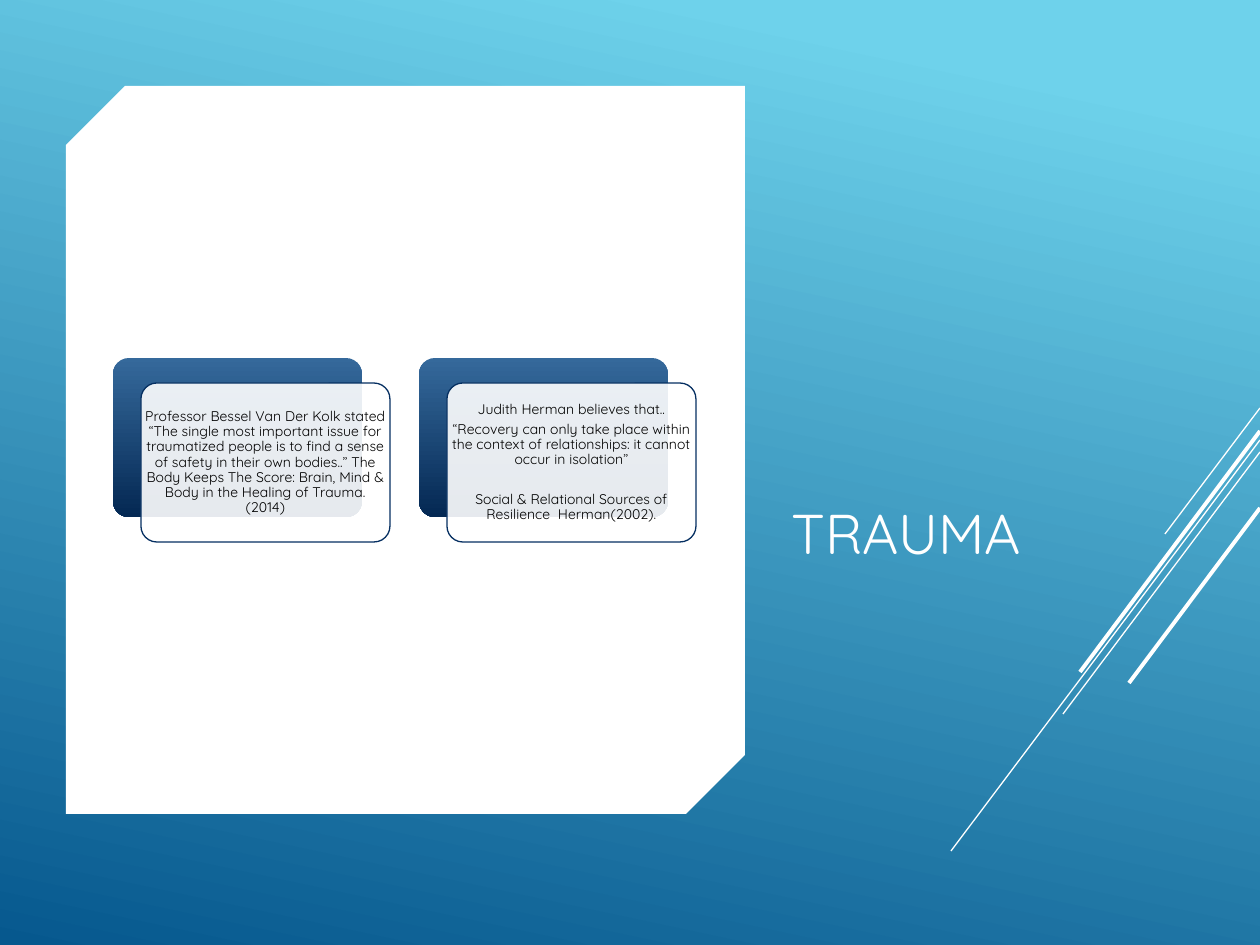
import dataclasses

import lxml.etree
import pptx
import pptx.dml.color
import pptx.enum.shapes
import pptx.enum.text
import pptx.oxml
import pptx.oxml.ns
import pptx.util

RGB = pptx.dml.color.RGBColor
Pt = pptx.util.Pt
Shape = pptx.enum.shapes.MSO_SHAPE
Align = pptx.enum.text.PP_ALIGN
Anchor = pptx.enum.text.MSO_ANCHOR
qn = pptx.oxml.ns.qn

WHITE = RGB(0xFF, 0xFF, 0xFF)
BLACK = RGB(0x00, 0x00, 0x00)
SKY = RGB(0x6E, 0xD2, 0xEB)
SEA = RGB(0x06, 0x58, 0x8E)
STEEL = RGB(0x35, 0x69, 0x9B)
NAVY = RGB(0x04, 0x28, 0x53)
EDGE = RGB(0x05, 0x2F, 0x61)

FONT = "Quicksand"
SCALE = 914400 / 126
WIDE, HIGH = 1260, 945
CARD_W, CARD_H = 249, 159
CARD_X, CARD_Y, STEP = 113, 358, 306
SHIFT_X, SHIFT_Y = 28, 25


@dataclasses.dataclass(frozen=True)
class Box:
    x: int
    y: int
    w: int
    h: int

    def emu(self) -> list[int]:
        return [px(n) for n in (self.x, self.y, self.w, self.h)]


@dataclasses.dataclass(frozen=True)
class Ray:
    """A line that runs down and left from the slide's right edge."""
    top: int
    x: int
    y: int
    width: float


@dataclasses.dataclass(frozen=True)
class Para:
    text: str
    before: int = 0


RAYS = [
    Ray(408, 1165, 534, 0.75),
    Ray(440, 951, 851, 0.75),
    Ray(452, 1063, 714, 0.75),
    Ray(431, 1080, 672, 2.25),
    Ray(508, 1129, 683, 2.25),
]

QUOTES = [
    [Para("Professor Bessel Van Der Kolk stated “The single most important "
          "issue for traumatized people is to find a sense of safety in their "
          "own bodies..” The Body Keeps The Score: Brain, Mind & Body in the "
          "Healing of Trauma. (2014)")],
    [Para("Judith Herman believes that.."),
     Para("“Recovery can only take place within the context of relationships: "
          "it cannot occur in isolation”"),
     Para("Social & Relational Sources of Resilience  Herman(2002).", 11)],
]


def px(n: int) -> int:
    return round(n * SCALE)


def apply(target, values: dict) -> None:
    for name, value in values.items():
        setattr(target, name, value)


def add_shape(slide, kind, box: Box, *adjust: float):
    shape = slide.shapes.add_shape(kind, *box.emu())
    shape.shadow.inherit = False
    shape.line.fill.background()
    for i, value in enumerate(adjust):
        shape.adjustments[i] = value
    return shape


def fill_solid(shape, color: RGB) -> None:
    shape.fill.solid()
    shape.fill.fore_color.rgb = color


def fill_blend(shape, stops: list[tuple[float, RGB]], angle: int) -> None:
    """Fill with a gradient; the angle is clockwise from left to right."""
    shape.fill.gradient()
    shape.fill.gradient_angle = 360 - angle
    for stop, (place, color) in zip(shape.fill.gradient_stops, stops):
        stop.position = place
        stop.color.rgb = color


def set_alpha(shape, share: int) -> None:
    tint = shape.element.spPr.find(qn("a:solidFill")).find(qn("a:srgbClr"))
    lxml.etree.SubElement(tint, qn("a:alpha")).set("val", str(share * 1000))


def add_ray(slide, ray: Ray) -> None:
    line = slide.shapes.add_connector(
        pptx.enum.shapes.MSO_CONNECTOR.STRAIGHT,
        px(WIDE), px(ray.top), px(ray.x), px(ray.y))
    line.line.width = Pt(ray.width)
    line.line.color.rgb = WHITE
    lxml.etree.SubElement(line.element.spPr, qn("a:effectLst"))


def write(para, text: str, size: int, color: RGB, form: dict) -> None:
    apply(para, form)
    run = para.add_run()
    run.text = text
    apply(run.font, {"name": FONT, "size": Pt(size)})
    run.font.color.rgb = color


def add_quote(slide, box: Box, paras: list[Para]) -> None:
    frame = slide.shapes.add_textbox(*box.emu()).text_frame
    apply(frame, {"word_wrap": True, "vertical_anchor": Anchor.MIDDLE,
                  "margin_left": px(4), "margin_right": px(4),
                  "margin_top": px(4), "margin_bottom": px(4)})
    for i, item in enumerate(paras):
        para = frame.add_paragraph() if i else frame.paragraphs[0]
        write(para, item.text, 8, BLACK,
              {"alignment": Align.CENTER, "line_spacing": 0.9,
               "space_before": Pt(item.before), "space_after": Pt(2.8)})


def add_card(slide, left: int, paras: list[Para]) -> None:
    back = Box(left, CARD_Y, CARD_W, CARD_H)
    front = Box(left + SHIFT_X, CARD_Y + SHIFT_Y, CARD_W, CARD_H)
    base = add_shape(slide, Shape.ROUNDED_RECTANGLE, back, 0.1)
    fill_blend(base, [(0, STEEL), (1, NAVY)], 90)
    pane = add_shape(slide, Shape.ROUNDED_RECTANGLE, front, 0.1)
    fill_solid(pane, WHITE)
    set_alpha(pane, 90)
    pane.line.color.rgb = EDGE
    pane.line.width = Pt(0.75)
    add_quote(slide, front, paras)


def set_title(title, text: str, box: Box) -> None:
    apply(title, dict(zip(("left", "top", "width", "height"), box.emu())))
    frame = title.text_frame
    apply(frame, {"word_wrap": True, "vertical_anchor": Anchor.BOTTOM,
                  "auto_size": pptx.enum.text.MSO_AUTO_SIZE.NONE})
    write(frame.paragraphs[0], text, 32, WHITE, {"alignment": Align.LEFT})


def main() -> None:
    deck = pptx.Presentation()
    apply(deck, {"slide_width": px(WIDE), "slide_height": px(HIGH)})
    slide = deck.slides.add_slide(deck.slide_layouts[5])

    ground = add_shape(slide, Shape.RECTANGLE, Box(0, 0, WIDE, HIGH))
    fill_blend(ground, [(0.1, SKY), (1, SEA)], 102)
    title = slide.shapes.title
    set_title(title, "TRAUMA", Box(779, 86, 378, 486))
    ground.element.addnext(title.element)

    panel = add_shape(slide, Shape.SNIP_2_DIAG_RECTANGLE,
                      Box(66, 86, 679, 728), 0.087, 0)
    fill_solid(panel, WHITE)
    for ray in RAYS:
        add_ray(slide, ray)
    for i, paras in enumerate(QUOTES):
        add_card(slide, CARD_X + i * STEP, paras)

    deck.save("out.pptx")


if __name__ == "__main__":
    main()
